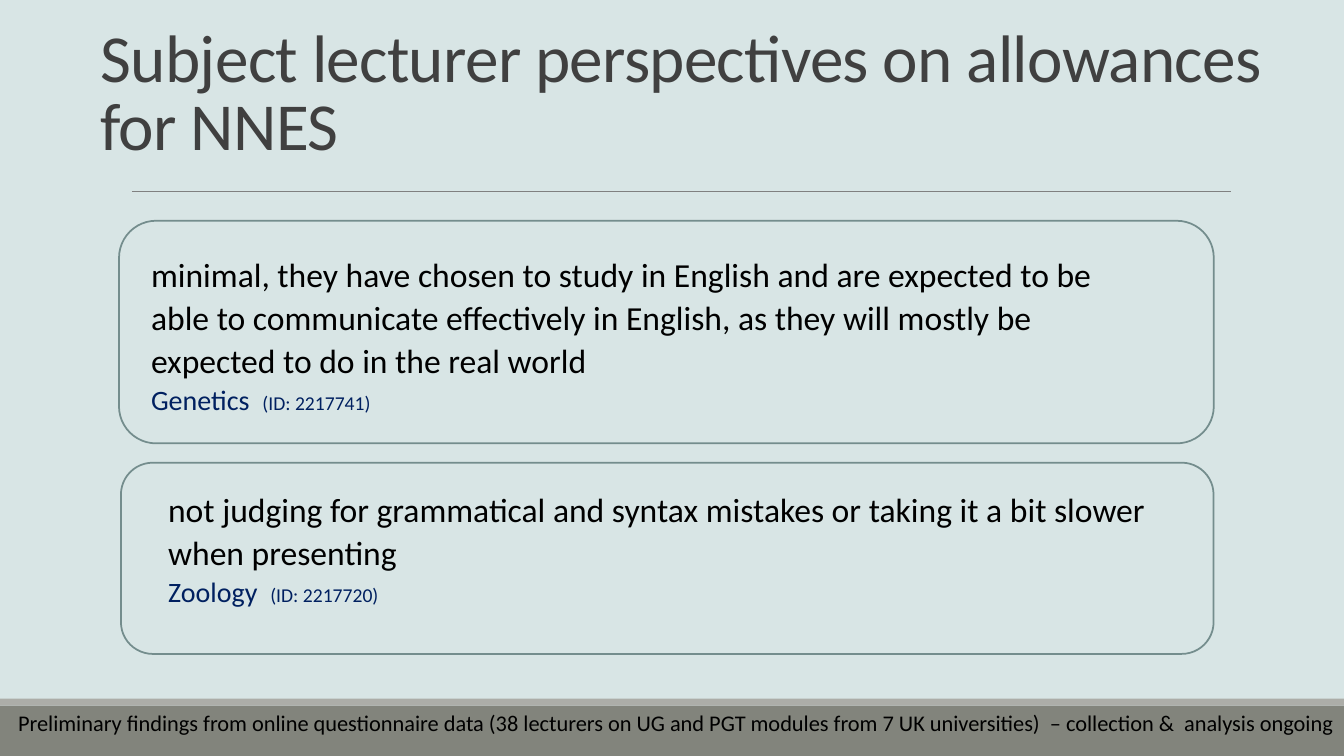
"""Build the slide on lecturer perspectives on allowances for NNES."""
from lxml.etree import SubElement
from pptx import Presentation
from pptx.dml.color import RGBColor as RGB
from pptx.enum.shapes import MSO_CONNECTOR as LINK, MSO_SHAPE as SHAPE
from pptx.enum.text import MSO_ANCHOR as ANCHOR
from pptx.oxml.ns import qn
from pptx.util import Pt

HUES = {
    "back": "D8E5E5", "band": "82847C", "strip": "ACADA8", "rule": "808080",
    "title": "404040", "frame": "748D8D", "text": "000000", "field": "002060",
}


def hue(name):
    return RGB.from_string(HUES[name])


def add_text(box, lines, space=None, anchor=ANCHOR.TOP):
    frame = slide.shapes.add_textbox(*map(Pt, box)).text_frame
    frame.word_wrap = True
    frame.vertical_anchor = anchor
    for i, line in enumerate(lines):
        para = frame.add_paragraph() if i else frame.paragraphs[0]
        para.line_spacing = space
        for words, size, color in line:
            run = para.add_run()
            run.text = words
            run.font.name = "Calibri"
            run.font.size = Pt(size)
            run.font.color.rgb = hue(color)
    return frame


deck = Presentation()
deck.slide_width, deck.slide_height = Pt(960), Pt(540)
slide = deck.slides.add_slide(deck.slide_layouts[6])
slide.background.fill.solid()
slide.background.fill.fore_color.rgb = hue("back")

for name, top, height in [("band", 504, 36), ("strip", 499, 5)]:
    bar = slide.shapes.add_shape(SHAPE.RECTANGLE, 0, Pt(top), Pt(960), Pt(height))
    bar.shadow.inherit = False
    bar.fill.solid()
    bar.fill.fore_color.rgb = hue(name)
    bar.line.fill.background()

rule = slide.shapes.add_connector(LINK.STRAIGHT, Pt(94.3), Pt(136.6), Pt(879), Pt(136.6))
rule.line.color.rgb = hue("rule")
rule.line.width = Pt(0.5)
SubElement(rule._element.spPr, qn("a:effectLst"))

title = add_text(
    (64.8, 22.3, 864.7, 98.6),
    [[("Subject lecturer perspectives on allowances for NNES", 48, "title")]],
    0.85, ANCHOR.BOTTOM)
title.paragraphs[0].runs[0]._r.get_or_add_rPr().set("spc", "-50")

add_text(
    (5.8, 503.3, 972.7, 26.6),
    [[("Preliminary findings from online questionnaire data (38 lecturers on UG and PGT "
       "modules from 7 UK universities)  – collection &  analysis ongoing", 16, "text")]])

quotes = [
    ((85, 157.7, 782, 159), (100.8, 175.7, 725.8, 126.7),
     "minimal, they have chosen to study in English and are expected to be able to "
     "communicate effectively in English, as they will mostly be expected to do in "
     "the real world", "Genetics  ", "(ID: 2217741)"),
    ((86.4, 330.5, 780.5, 136.6), (113, 343.4, 725.8, 95.8),
     "not judging for grammatical and syntax mistakes or taking it a bit slower when "
     "presenting", "Zoology  ", "(ID: 2217720)"),
]
for edge, box, quote, field, code in quotes:
    card = slide.shapes.add_shape(SHAPE.ROUNDED_RECTANGLE, *map(Pt, edge))
    card.shadow.inherit = False
    card.fill.background()
    card.line.color.rgb = hue("frame")
    card.line.width = Pt(1.25)
    add_text(box, [[(quote, 24, "text")],
                   [(field, 20, "field"), (code, 14, "field")]], 1.07)

deck.save("out.pptx")
